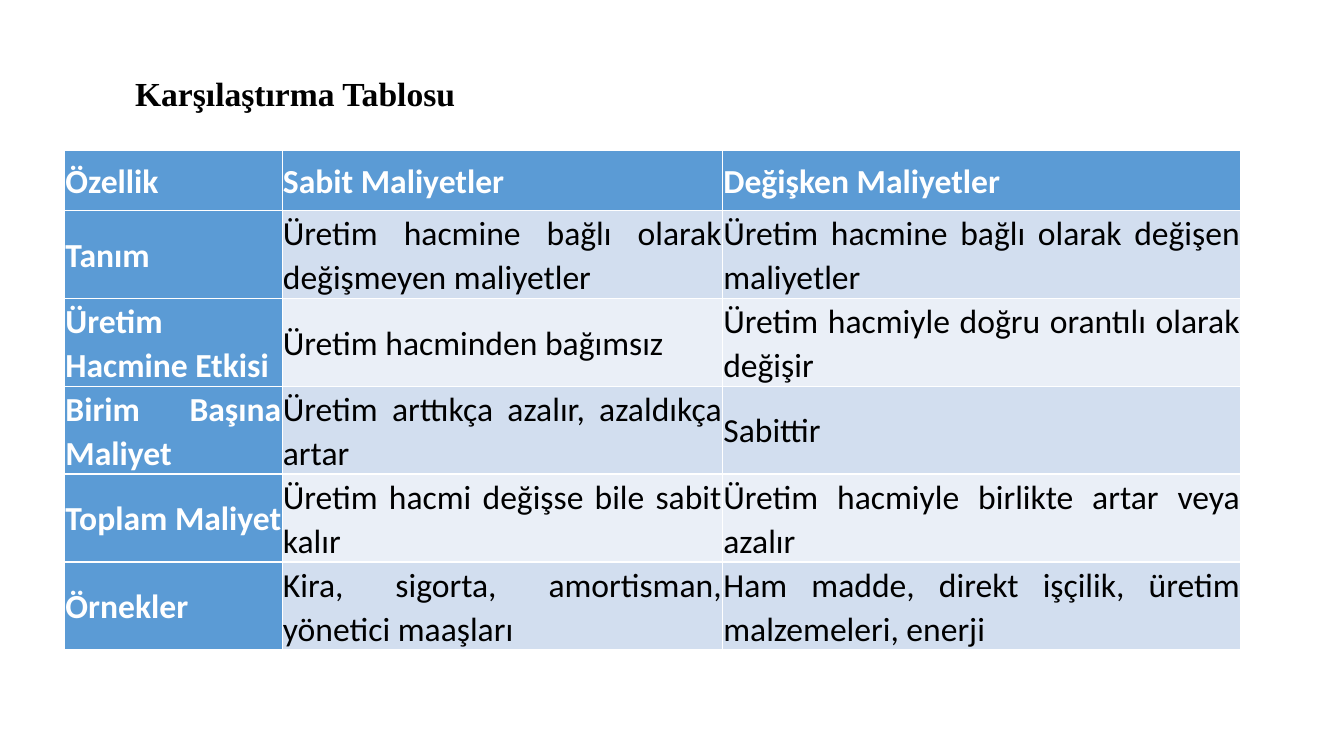
from pptx import Presentation
from pptx.dml.color import RGBColor
from pptx.enum.text import MSO_ANCHOR, MSO_AUTO_SIZE, PP_ALIGN
from pptx.util import Cm, Pt


def color(code):
    return RGBColor.from_string(code)


class Deck:
    """Holds the style and the current slide."""

    blue, white, black = "5B9BD5", "FFFFFF", "000000"
    bands = ["D2DEEF", "EAEFF7"]

    def __init__(self):
        self.prs = Presentation()
        self.prs.slide_width, self.prs.slide_height = Cm(33.87), Cm(19.05)
        self.slide = self.prs.slides.add_slide(self.prs.slide_layouts[5])

    def style(self, para, face, tone, bold):
        font = para.font
        font.name, font.size, font.bold = face, Pt(24), bold
        font.color.rgb = color(tone)

    def title(self, text, left, top, width, height):
        shape = self.slide.shapes.title
        shape.left, shape.top = Cm(left), Cm(top)
        shape.width, shape.height = Cm(width), Cm(height)
        frame = shape.text_frame
        frame.text = text
        frame.word_wrap = True
        frame.auto_size = MSO_AUTO_SIZE.SHAPE_TO_FIT_TEXT
        frame.vertical_anchor = MSO_ANCHOR.TOP
        para = frame.paragraphs[0]
        para.alignment = PP_ALIGN.LEFT
        self.style(para, "Times New Roman", self.black, True)

    def cell(self, cell, text, fill, head):
        cell.text = text
        cell.fill.solid()
        cell.fill.fore_color.rgb = color(fill)
        cell.vertical_anchor = MSO_ANCHOR.MIDDLE
        cell.margin_left = cell.margin_right = Cm(0.02)
        cell.margin_top = cell.margin_bottom = Cm(0.02)
        para = cell.text_frame.paragraphs[0]
        para.alignment = PP_ALIGN.JUSTIFY
        para.line_spacing = 1.07
        self.style(para, "Calibri", self.white if head else self.black, head)

    def table(self, rows, left, top, widths, height):
        frame = self.slide.shapes.add_table(
            len(rows), len(widths), Cm(left), Cm(top),
            Cm(sum(widths)), Cm(height * len(rows)))
        table = frame.table
        table.first_col = True
        for col, width in zip(table.columns, widths):
            col.width = Cm(width)
        for r, row in enumerate(rows):
            table.rows[r].height = Cm(height)
            for c, text in enumerate(row):
                head = r == 0 or c == 0
                fill = self.blue if head else self.bands[(r - 1) % 2]
                self.cell(table.cell(r, c), text, fill, head)


def main():
    deck = Deck()
    deck.title("Karşılaştırma Tablosu", 3.15, 1.7, 26.9, 1.28)
    rows = [
        ("Özellik", "Sabit Maliyetler", "Değişken Maliyetler"),
        ("Tanım", "Üretim hacmine bağlı olarak değişmeyen maliyetler",
         "Üretim hacmine bağlı olarak değişen maliyetler"),
        ("Üretim Hacmine Etkisi", "Üretim hacminden bağımsız",
         "Üretim hacmiyle doğru orantılı olarak değişir"),
        ("Birim Başına Maliyet", "Üretim arttıkça azalır, azaldıkça artar",
         "Sabittir"),
        ("Toplam Maliyet", "Üretim hacmi değişse bile sabit kalır",
         "Üretim hacmiyle birlikte artar veya azalır"),
        ("Örnekler", "Kira, sigorta, amortisman, yönetici maaşları",
         "Ham madde, direkt işçilik, üretim malzemeleri, enerji"),
    ]
    deck.table(rows, 1.63, 3.8, [5.48, 11.1, 13.06], 1.5)
    deck.prs.save("out.pptx")


if __name__ == "__main__":
    main()
